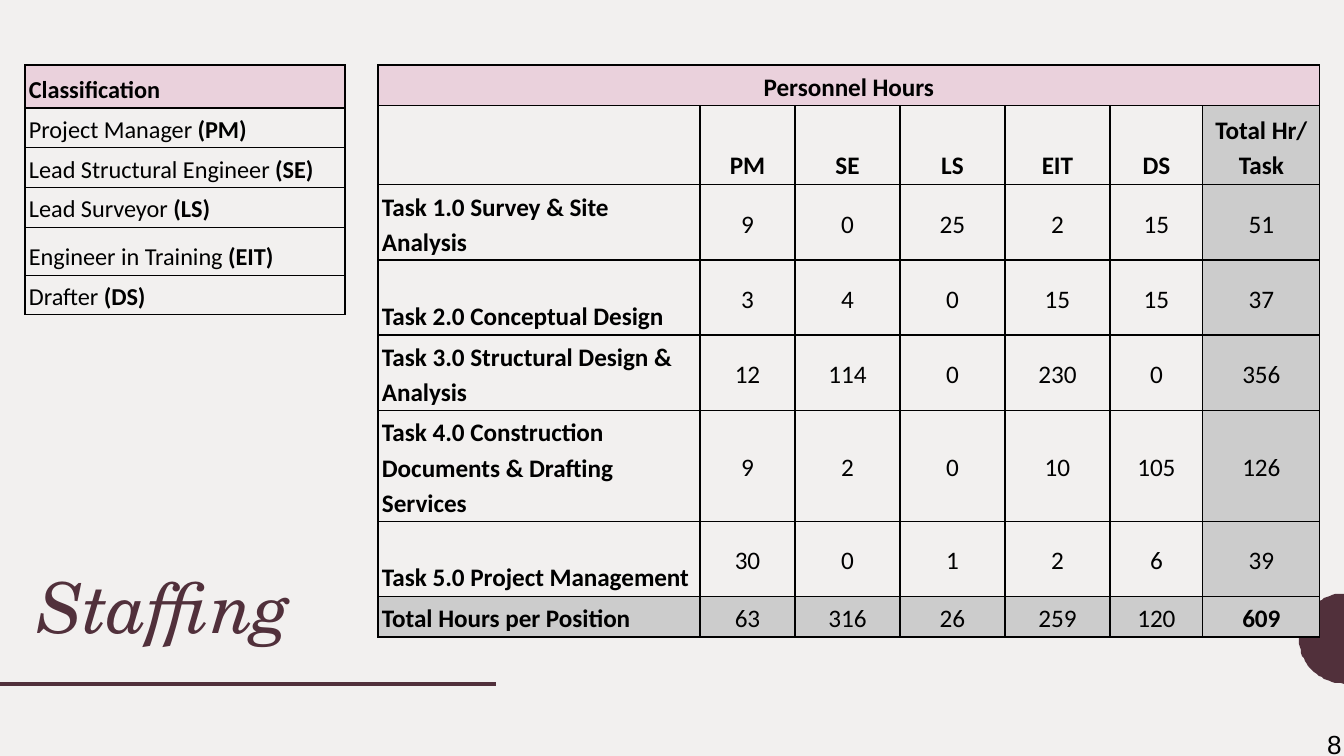
import math
import pptx
import pptx.util
import pptx.dml.color
import pptx.enum.shapes
import pptx.enum.text
import pptx.oxml
import pptx.oxml.ns

PX = 914400 / 134.4
PLUM, PINK, GREY, INK = "51303B", "EAD1DC", "CCCCCC", "000000"
ANCHOR = pptx.enum.text.MSO_ANCHOR
ALIGN = pptx.enum.text.PP_ALIGN

ROLES = [("Project Manager ", "(PM)"), ("Lead Structural Engineer ", "(SE)"),
         ("Lead Surveyor", " (LS)"), ("Engineer in Training", " (EIT)"),
         ("Drafter ", "(DS)")]
HEADS = ["", "PM", "SE", "LS", "EIT", "DS", "Total Hr/\nTask"]
TASKS = [
    ["Task 1.0 Survey & Site Analysis", 9, 0, 25, 2, 15, 51],
    ["Task 2.0 Conceptual Design", 3, 4, 0, 15, 15, 37],
    ["Task 3.0 Structural Design & Analysis", 12, 114, 0, 230, 0, 356],
    ["Task 4.0 Construction Documents & Drafting Services", 9, 2, 0, 10, 105, 126],
    ["Task 5.0 Project Management", 30, 0, 1, 2, 6, 39],
    ["Total Hours per Position", 63, 316, 26, 259, 120, 609],
]
HOUR_COLS = [322, 95, 105, 105, 105, 93, 117]
HOUR_ROWS = [40, 79, 75, 75, 75, 111, 75, 40]
ROLE_ROWS = [43, 40, 39, 40, 48, 39]


def px(n):
    return pptx.util.Emu(round(n * PX))


def rgb(code):
    return pptx.dml.color.RGBColor.from_string(code)


def style(font, name, size, color, bold=False, italic=False):
    font.name, font.size = name, pptx.util.Pt(size)
    font.color.rgb = rgb(color)
    font.bold, font.italic = bold, italic


def border(cell):
    props = cell._tc.get_or_add_tcPr()
    for side in ("lnL", "lnR", "lnT", "lnB"):
        props.append(pptx.oxml.parse_xml(
            f'<a:{side} {pptx.oxml.ns.nsdecls("a")} w="9525"><a:solidFill>'
            f'<a:srgbClr val="{INK}"/></a:solidFill></a:{side}>'))


def fill_cell(cell, text, size, bold, fill=None, align=ALIGN.LEFT,
              anchor=ANCHOR.BOTTOM, tail=""):
    border(cell)
    cell.margin_left = cell.margin_right = px(4)
    cell.margin_top = cell.margin_bottom = px(3)
    cell.vertical_anchor = anchor
    if fill:
        cell.fill.solid()
        cell.fill.fore_color.rgb = rgb(fill)
    else:
        cell.fill.background()
    cell.text_frame.text = text
    for para in cell.text_frame.paragraphs:
        para.alignment, para.line_spacing = align, 1.15
        style(para.font, "Calibri", size, INK, bold)
        for run in para.runs:
            style(run.font, "Calibri", size, INK, bold)
    if tail:
        run = cell.text_frame.paragraphs[0].add_run()
        run.text = tail
        style(run.font, "Calibri", size, INK, True)


def add_grid(slide, left, top, cols, rows):
    grid = slide.shapes.add_table(len(rows), len(cols), px(left), px(top),
                                  px(sum(cols)), px(sum(rows))).table
    grid.first_row = grid.horz_banding = False
    for col, width in zip(grid.columns, cols):
        col.width = px(width)
    for row, height in zip(grid.rows, rows):
        row.height = px(height)
    return grid


def add_label(slide, box, text, anchor, *look):
    frame = slide.shapes.add_textbox(*map(px, box)).text_frame
    frame.word_wrap = True
    frame.vertical_anchor = anchor
    frame.margin_left = frame.margin_right = px(13)
    frame.margin_top = frame.margin_bottom = px(13)
    frame.text = text
    para = frame.paragraphs[0]
    style(para.runs[0].font, *look)
    return para


def add_decor(slide):
    arc = [(1344 - 45 * math.sin(math.pi * i / 48),
            638.5 - 45 * math.cos(math.pi * i / 48)) for i in range(49)]
    pen = slide.shapes.build_freeform(*arc[0], scale=PX)
    pen.add_line_segments(arc[1:], close=True)
    disc = pen.convert_to_shape()
    disc.shadow.inherit = False
    disc.fill.solid()
    disc.fill.fore_color.rgb = rgb(PLUM)
    disc.line.fill.background()

    rule = slide.shapes.add_connector(
        pptx.enum.shapes.MSO_CONNECTOR.STRAIGHT, px(0), px(684), px(496), px(684))
    rule.line.color.rgb = rgb(PLUM)
    rule.line.width = pptx.util.Pt(2)
    rule._element.spPr.append(pptx.oxml.parse_xml(
        f'<a:effectLst {pptx.oxml.ns.nsdecls("a")}/>'))


def add_hours(slide):
    grid = add_grid(slide, 378, 65, HOUR_COLS, HOUR_ROWS)
    last = len(HOUR_COLS) - 1
    for c, head in enumerate(HEADS):
        fill_cell(grid.cell(0, c), "" if c else "Personnel Hours", 13.5, True,
                  PINK, ALIGN.CENTER)
        fill_cell(grid.cell(1, c), head, 13.5, True,
                  GREY if c == last else None, ALIGN.CENTER)
    grid.cell(0, 0).merge(grid.cell(0, last))
    for r, task in enumerate(TASKS):
        total = r == len(TASKS) - 1
        for c, value in enumerate(task):
            fill_cell(grid.cell(r + 2, c), str(value), 13.5,
                      c == 0 or (total and c == last),
                      GREY if total or c == last else None,
                      ALIGN.CENTER if c else ALIGN.LEFT,
                      ANCHOR.MIDDLE if c else ANCHOR.BOTTOM)


def add_roles(slide):
    grid = add_grid(slide, 25, 65, [320], ROLE_ROWS)
    fill_cell(grid.cell(0, 0), "Classification", 13, True, PINK)
    for r, (role, code) in enumerate(ROLES, 1):
        fill_cell(grid.cell(r, 0), role, 13, False, tail=code)


def main():
    deck = pptx.Presentation()
    deck.slide_width, deck.slide_height = px(1344), px(756)
    slide = deck.slides.add_slide(deck.slide_layouts[6])
    slide.background.fill.solid()
    slide.background.fill.fore_color.rgb = rgb("F2F0EF")
    add_decor(slide)
    title = add_label(slide, (25, 562, 320, 100), "Staffing", ANCHOR.BOTTOM,
                      "TeX Gyre Schola", 37.5, PLUM, False, True)
    title.line_spacing = 0.9
    add_hours(slide)
    add_label(slide, (1314, 715, 30, 32), "8", ANCHOR.TOP, "Arial", 14, INK)
    add_roles(slide)
    deck.save("out.pptx")


if __name__ == "__main__":
    main()
